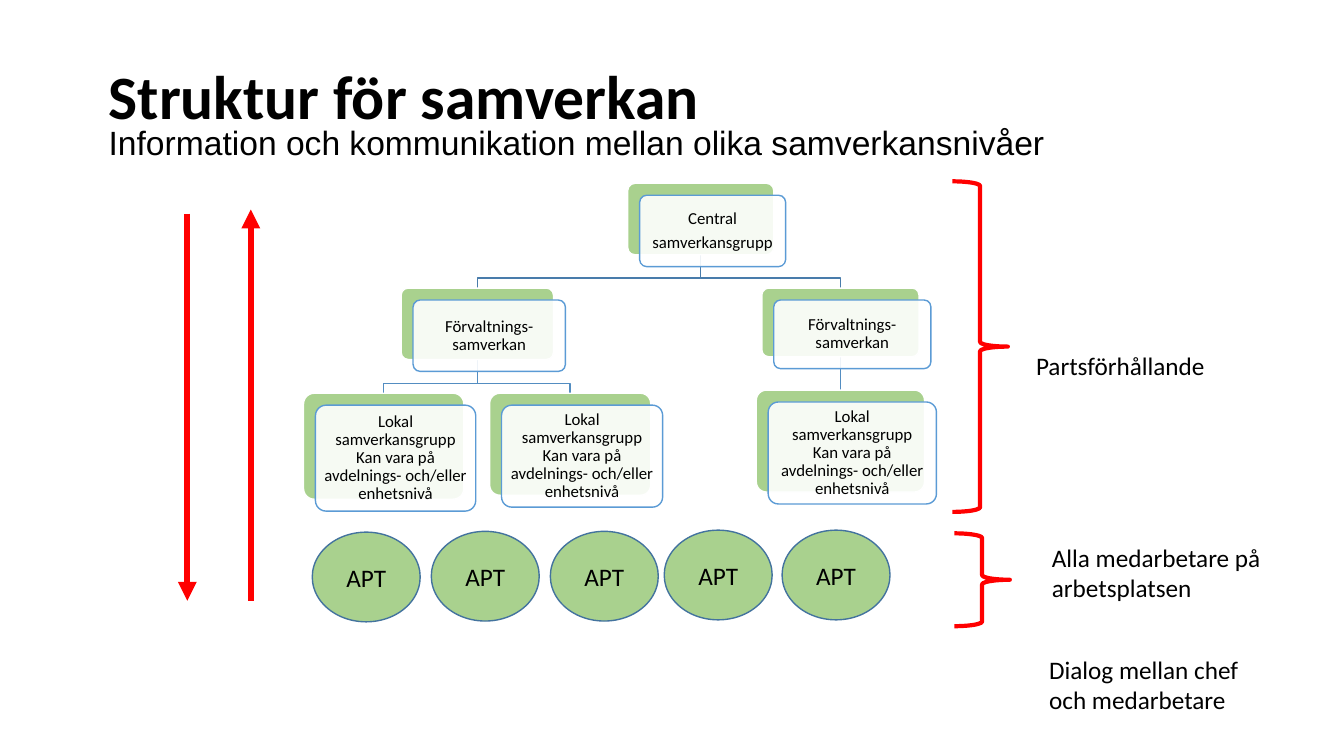
from dataclasses import dataclass
from pptx import Presentation
from pptx.dml.color import RGBColor as RGB
from pptx.enum.shapes import MSO_CONNECTOR as Link, MSO_SHAPE as Form
from pptx.enum.text import MSO_ANCHOR as Anchor, PP_ALIGN as Align
from pptx.oxml.ns import qn
from pptx.util import Cm, Pt
from lxml.etree import SubElement


@dataclass(frozen=True)
class Theme:
    black: RGB = RGB(0, 0, 0)
    white: RGB = RGB(255, 255, 255)
    green: RGB = RGB(0xA9, 0xD1, 0x8E)
    red: RGB = RGB(255, 0, 0)
    edge: RGB = RGB(0x5B, 0x9B, 0xD5)
    rim: RGB = RGB(0x43, 0x73, 0x9E)
    links: tuple = (RGB(0x49, 0x7C, 0xAB), RGB(0x53, 0x8D, 0xC1))
    font: str = "Calibri"
    title: int = 44
    sub: int = 24
    label: int = 18
    card: int = 12


theme = Theme()
deck = Presentation()
deck.slide_width, deck.slide_height = Cm(33.87), Cm(19.05)
slide = deck.slides.add_slide(deck.slide_layouts[6])
shapes = slide.shapes


def write(shape, text, size, font=theme.font, bold=False, align=Align.LEFT,
          anchor=Anchor.MIDDLE, space=1.0):
    frame = shape.text_frame
    frame.text = text
    frame.word_wrap = True
    frame.vertical_anchor = anchor
    for par in frame.paragraphs:
        par.alignment = align
        par.line_spacing = space
        for run in par.runs:
            run.font.name, run.font.size = font, Pt(size)
            run.font.bold, run.font.color.rgb = bold, theme.black
    return frame


def draw(form, box, fill, line, width=1):
    shape = shapes.add_shape(form, *map(Cm, box))
    shape.shadow.inherit = False
    if fill is None:
        shape.fill.background()
    else:
        shape.fill.solid()
        shape.fill.fore_color.rgb = fill
    shape.line.color.rgb, shape.line.width = line, Pt(width)
    return shape


# Heading
head = shapes.add_textbox(Cm(2.49), Cm(0.99), Cm(28.85), Cm(3.05))
write(head, "Struktur för samverkan", theme.title, bold=True, space=0.9)
sub = shapes.add_textbox(Cm(2.49), Cm(2.95), Cm(24.2), Cm(1.3))
write(sub, "Information och kommunikation mellan olika samverkansnivåer",
      theme.sub, font="Arial", anchor=Anchor.TOP)

# Group tree: text, box, parent, level of the link
top = "Central\nsamverkansgrupp"
mid = "Förvaltnings-samverkan"
low = "Lokal samverkansgrupp\vKan vara på avdelnings- och/eller enhetsnivå"
cards = [
    (top, (15.82, 4.62, 3.68, 1.8), None, 0),
    (mid, (10.11, 7.26, 3.84, 1.8), 0, 0),
    (mid, (19.2, 7.26, 3.96, 1.73), 0, 0),
    (low, (7.65, 9.91, 4.04, 2.67), 1, 1),
    (low, (12.34, 9.91, 4.06, 2.57), 1, 1),
    (low, (19.06, 9.83, 4.24, 2.57), 2, 1),
]

# Links, behind the cards
for text, (left, y, wide, high), parent, level in cards:
    if parent is None:
        continue
    px, py, pw, ph = cards[parent][1]
    start = Cm(round(px + pw / 2, 2)), Cm(py + ph)
    end = Cm(round(left + wide / 2, 2)), Cm(y)
    bend = Cm(y - 0.25)
    if start[0] == end[0]:
        link = shapes.add_connector(Link.STRAIGHT, *start, *end)
        SubElement(link._element.spPr, qn("a:effectLst"))
    else:
        path = shapes.build_freeform(*start)
        path.add_line_segments([(start[0], bend), (end[0], bend), end], close=False)
        link = path.convert_to_shape()
        link.shadow.inherit = False
        link.fill.background()
    link.line.color.rgb, link.line.width = theme.links[level], Pt(1)

# Cards: green back and pale front
shift = 0.3
for text, (left, y, wide, high), parent, level in cards:
    back = draw(Form.ROUNDED_RECTANGLE, (left, y, wide, high), theme.green, theme.white)
    front = draw(Form.ROUNDED_RECTANGLE, (left + shift, y + shift, wide, high),
                 theme.white, theme.edge)
    back.adjustments[0] = front.adjustments[0] = 0.1
    tint = front._element.spPr.find(qn("a:solidFill"))[0]
    SubElement(tint, qn("a:alpha"), val="90000")
    frame = write(front, text, theme.card, align=Align.CENTER, space=0.9)
    frame.margin_left = frame.margin_right = Cm(0.13)
    frame.margin_top = frame.margin_bottom = Cm(0.13)
    for par in frame.paragraphs[:-1]:
        par.space_after = Pt(4)

# Arrows down and up
for x, y1, y2 in [(4.72, 5.38, 15.14), (6.32, 15.14, 5.28)]:
    arrow = shapes.add_connector(Link.STRAIGHT, Cm(x), Cm(y1), Cm(x), Cm(y2))
    arrow.line.color.rgb, arrow.line.width = theme.red, Pt(4.5)
    SubElement(arrow.line._get_or_add_ln(), qn("a:tailEnd"), type="triangle")
    SubElement(arrow._element.spPr, qn("a:effectLst"))

# Workplace meetings
for left, y in [(7.87, 13.41), (10.87, 13.39), (13.87, 13.39),
                (16.74, 13.36), (19.71, 13.36)]:
    oval = draw(Form.OVAL, (left, y, 2.72, 2.26), theme.green, theme.rim)
    write(oval, "APT", theme.label, align=Align.CENTER)

# Braces
for box in [(24, 4.57, 1.4, 8.33), (24.05, 13.44, 1.4, 2.34)]:
    draw(Form.RIGHT_BRACE, box, None, theme.red, 3)

# Side labels
for text, box in [
    ("Partsförhållande", (25.86, 8.71, 5.79, 1.02)),
    ("Alla medarbetare på arbetsplatsen", (26.26, 13.54, 5.79, 1.8)),
    ("Dialog mellan chef\noch medarbetare", (26.19, 16.36, 7.6, 1.8)),
]:
    label = shapes.add_textbox(*map(Cm, box))
    write(label, text, theme.label, anchor=Anchor.TOP)

deck.save("out.pptx")
